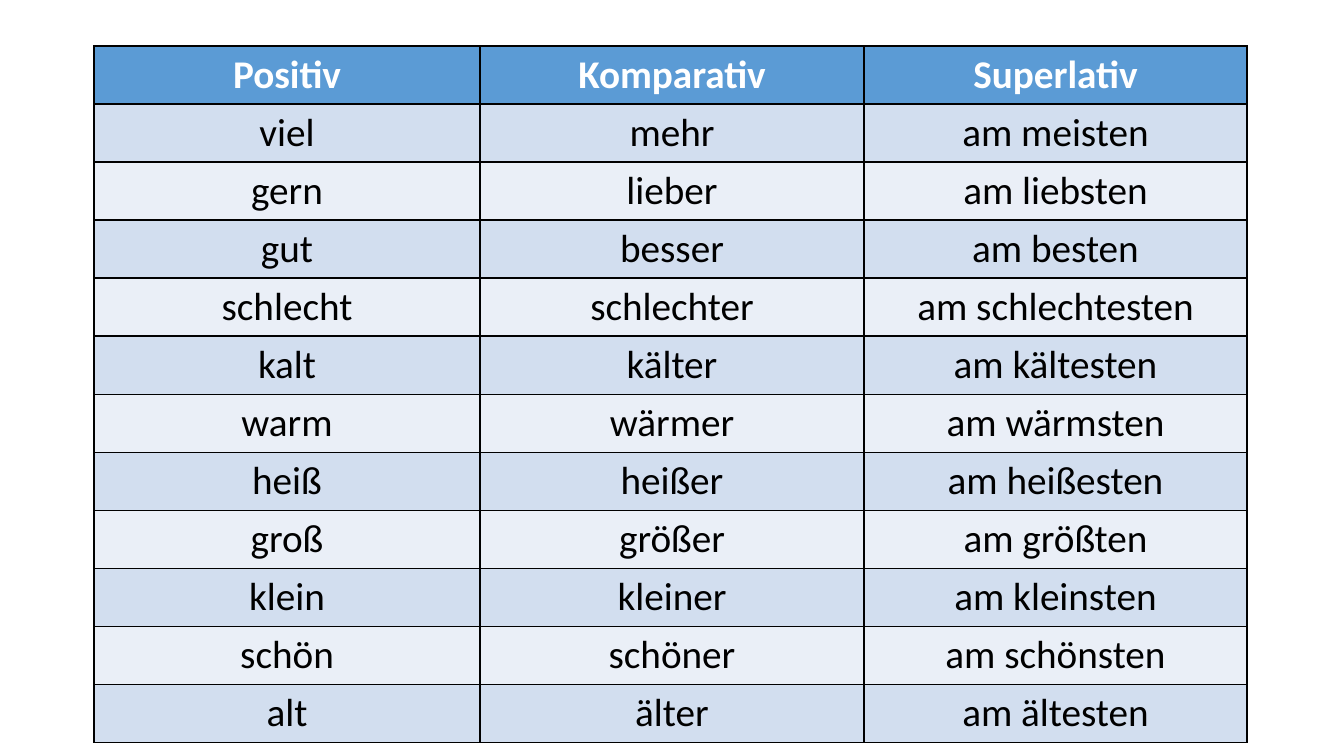
from lxml import etree
from pptx import Presentation
from pptx.dml.color import RGBColor
from pptx.enum.text import PP_ALIGN
from pptx.oxml import parse_xml
from pptx.util import Pt

PX = 914400 / 100.8
CENTER = PP_ALIGN.CENTER
BLACK = RGBColor(0x00, 0x00, 0x00)
WHITE = RGBColor(0xFF, 0xFF, 0xFF)
HEADER_BLUE = RGBColor(0x5B, 0x9B, 0xD5)
BAND_DARK = RGBColor(0xD2, 0xDE, 0xEF)
BAND_LIGHT = RGBColor(0xEA, 0xEF, 0xF7)
DRAWING_NS = "http://schemas.openxmlformats.org/drawingml/2006/main"

COLUMN_WIDTHS = [386, 384, 383]
ROW_HEIGHT = 58
COMPARISONS = [
    ("Positiv", "Komparativ", "Superlativ"),
    ("viel", "mehr", "am meisten"),
    ("gern", "lieber", "am liebsten"),
    ("gut", "besser", "am besten"),
    ("schlecht", "schlechter", "am schlechtesten"),
    ("kalt", "kälter", "am kältesten"),
    ("warm", "wärmer", "am wärmsten"),
    ("heiß", "heißer", "am heißesten"),
    ("groß", "größer", "am größten"),
    ("klein", "kleiner", "am kleinsten"),
    ("schön", "schöner", "am schönsten"),
    ("alt", "älter", "am ältesten"),
]


def px(length):
    return round(length * PX)


def add_borders(cell, color, width):
    properties = cell._tc.get_or_add_tcPr()
    for side in ("lnL", "lnR", "lnT", "lnB"):
        line = parse_xml(f'<a:{side} xmlns:a="{DRAWING_NS}" w="{width}"/>')
        fill = etree.SubElement(line, f"{{{DRAWING_NS}}}solidFill")
        etree.SubElement(fill, f"{{{DRAWING_NS}}}srgbClr", val=str(color))
        properties.append(line)


presentation = Presentation()
presentation.slide_width = px(1344)
presentation.slide_height = px(756)
slide = presentation.slides.add_slide(presentation.slide_layouts[6])

table = slide.shapes.add_table(
    len(COMPARISONS), len(COLUMN_WIDTHS), px(94), px(46),
    px(sum(COLUMN_WIDTHS)), px(ROW_HEIGHT * len(COMPARISONS)),
).table
for column, width in zip(table.columns, COLUMN_WIDTHS):
    column.width = px(width)

for row_index, words in enumerate(COMPARISONS):
    table.rows[row_index].height = px(ROW_HEIGHT)
    is_header = row_index == 0
    band = BAND_DARK if row_index % 2 else BAND_LIGHT
    for column_index, word in enumerate(words):
        cell = table.cell(row_index, column_index)
        add_borders(cell, BLACK, Pt(1))
        cell.fill.solid()
        cell.fill.fore_color.rgb = HEADER_BLUE if is_header else band
        cell.text_frame.text = word
        paragraph = cell.text_frame.paragraphs[0]
        paragraph.alignment = CENTER
        font = paragraph.runs[0].font
        font.name = "Calibri"
        font.size = Pt(28)
        font.bold = is_header
        font.color.rgb = WHITE if is_header else BLACK

presentation.save("out.pptx")
